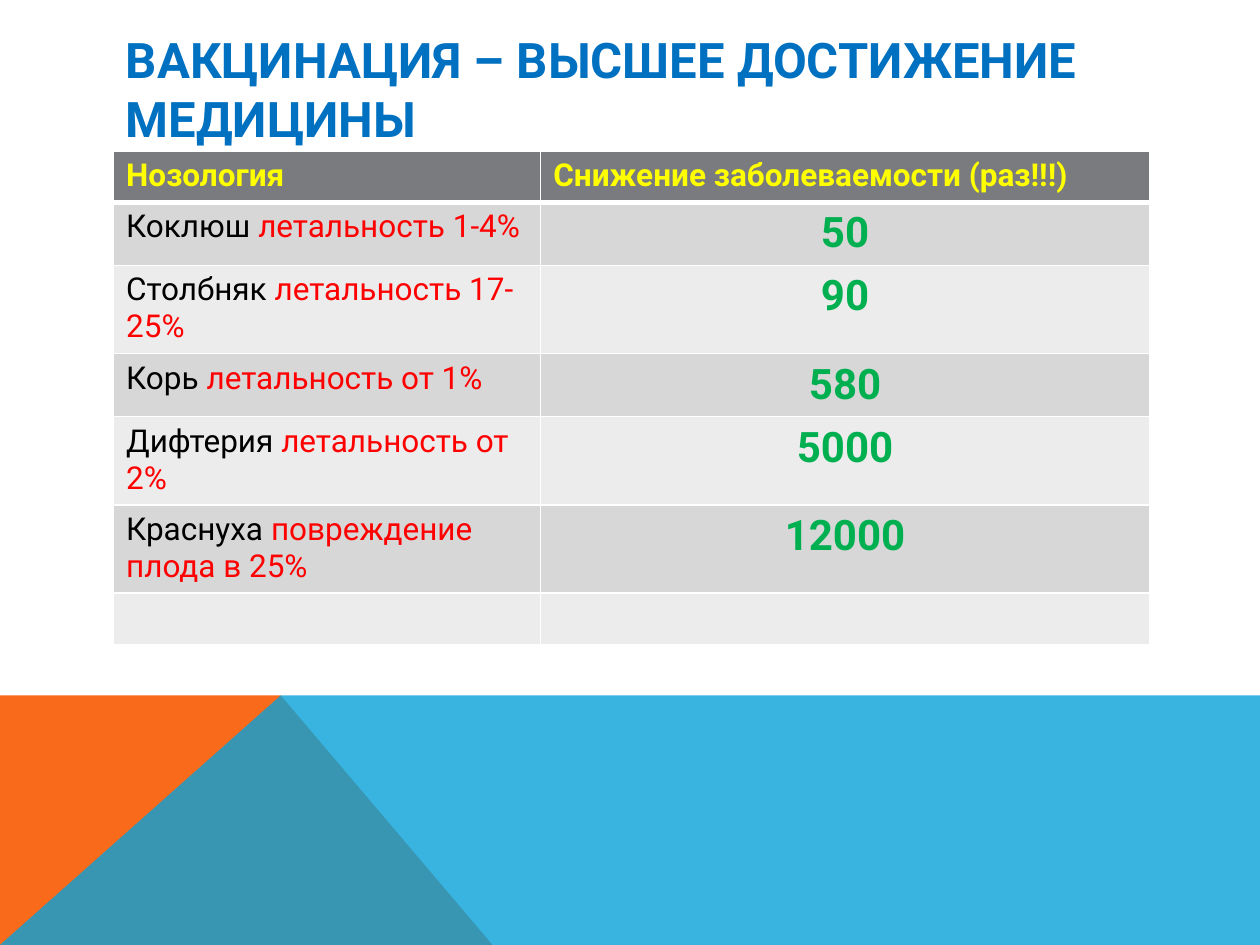
from lxml.etree import SubElement
from pptx import Presentation
from pptx.dml.color import RGBColor
from pptx.enum.text import MSO_ANCHOR, PP_ALIGN
from pptx.oxml.ns import qn
from pptx.util import Cm, Pt

FONT = "Roboto"
COLORS = {
    "title": "0070C0", "header_text": "FFFF00", "header_fill": "797B7E",
    "band_dark": "D7D7D8", "band_light": "ECECEC", "border": "FFFFFF",
    "disease": "000000", "risk": "FF0000", "reduction": "00B050",
    "orange": "F96A1B", "blue": "08A1D9",
}
HEADERS = ("Нозология", "Снижение заболеваемости (раз!!!)")
DISEASES = [
    ("Коклюш ", "летальность 1-4%", "50"),
    ("Столбняк ", "летальность 17-25%", "90"),
    ("Корь ", "летальность от 1%", "580"),
    ("Дифтерия ", "летальность от 2%", "5000"),
    ("Краснуха ", "повреждение плода в 25%", "12000"),
]


def color(name):
    return RGBColor.from_string(COLORS[name])


def add_run(paragraph, text, size, color_name, bold=False):
    run = paragraph.add_run()
    run.text = text
    run.font.name = FONT
    run.font.size = Pt(size)
    run.font.bold = bold
    run.font.color.rgb = color(color_name)


def add_polygon(slide, points, color_name, opacity=100):
    corners = [(Cm(x), Cm(y)) for x, y in points]
    builder = slide.shapes.build_freeform(*corners[0])
    builder.add_line_segments(corners[1:], close=True)
    shape = builder.convert_to_shape()
    shape.shadow.inherit = False
    shape.fill.solid()
    shape.fill.fore_color.rgb = color(color_name)
    shape.line.fill.background()
    if opacity < 100:
        rgb = shape.fill._xPr.find(".//" + qn("a:srgbClr"))
        SubElement(rgb, qn("a:alpha"), val=str(opacity * 1000))


def add_footer(slide, left, top, width, height):
    right, bottom = left + width, top + height
    peak = (left + 5.66, top)
    # Orange corner under a translucent blue band
    add_polygon(slide, [(left, bottom), (left, top), peak, (left + 9.93, bottom)], "orange")
    add_polygon(slide, [(left, bottom), peak, (right, top), (right, bottom)], "blue", 80)


def add_title(slide, left, top, width, height):
    box = slide.shapes.add_textbox(Cm(left), Cm(top), Cm(width), Cm(height))
    text_frame = box.text_frame
    text_frame.word_wrap = True
    text_frame.vertical_anchor = MSO_ANCHOR.MIDDLE
    add_run(text_frame.paragraphs[0], "ВАКЦИНАЦИЯ – ВЫСШЕЕ ДОСТИЖЕНИЕ МЕДИЦИНЫ", 28, "title", True)


def style_cell(cell, fill_name, bottom_width=1):
    # Borders come before the fill in the cell properties
    properties = cell._tc.get_or_add_tcPr()
    widths = {"a:lnL": 1, "a:lnR": 1, "a:lnT": 1, "a:lnB": bottom_width}
    for tag, points in widths.items():
        line = SubElement(properties, qn(tag), w=str(Pt(points)))
        solid = SubElement(line, qn("a:solidFill"))
        SubElement(solid, qn("a:srgbClr"), val=COLORS["border"])
    cell.fill.solid()
    cell.fill.fore_color.rgb = color(fill_name)


def add_disease_table(slide, left, top, width, row_height):
    row_count = len(DISEASES) + 2
    frame = slide.shapes.add_table(row_count, 2, Cm(left), Cm(top), Cm(width), Cm(row_height * row_count))
    table = frame.table
    first_width = 8.61
    table.columns[0].width = Cm(first_width)
    table.columns[1].width = Cm(width - first_width)

    # Fills and borders, including the empty last row
    for index, row in enumerate(table.rows):
        band = "band_dark" if index % 2 else "band_light"
        for cell in row.cells:
            style_cell(cell, band if index else "header_fill", 1 if index else 3)

    # Header
    for column, header in enumerate(HEADERS):
        add_run(table.cell(0, column).text_frame.paragraphs[0], header, 18, "header_text", True)

    # Diseases
    for index, (disease, risk, reduction) in enumerate(DISEASES, start=1):
        paragraph = table.cell(index, 0).text_frame.paragraphs[0]
        add_run(paragraph, disease, 18, "disease")
        add_run(paragraph, risk, 18, "risk")
        paragraph = table.cell(index, 1).text_frame.paragraphs[0]
        paragraph.alignment = PP_ALIGN.CENTER
        add_run(paragraph, reduction, 24, "reduction", True)


def main():
    presentation = Presentation()
    presentation.slide_width, presentation.slide_height = Cm(25.4), Cm(19.05)
    slide = presentation.slides.add_slide(presentation.slide_layouts[6])
    add_footer(slide, 0, 14.02, 25.4, 5.03)
    add_title(slide, 2.29, 1.02, 20.88, 1.52)
    add_disease_table(slide, 2.29, 3.05, 20.88, 1.03)
    presentation.save("out.pptx")


if __name__ == "__main__":
    main()
